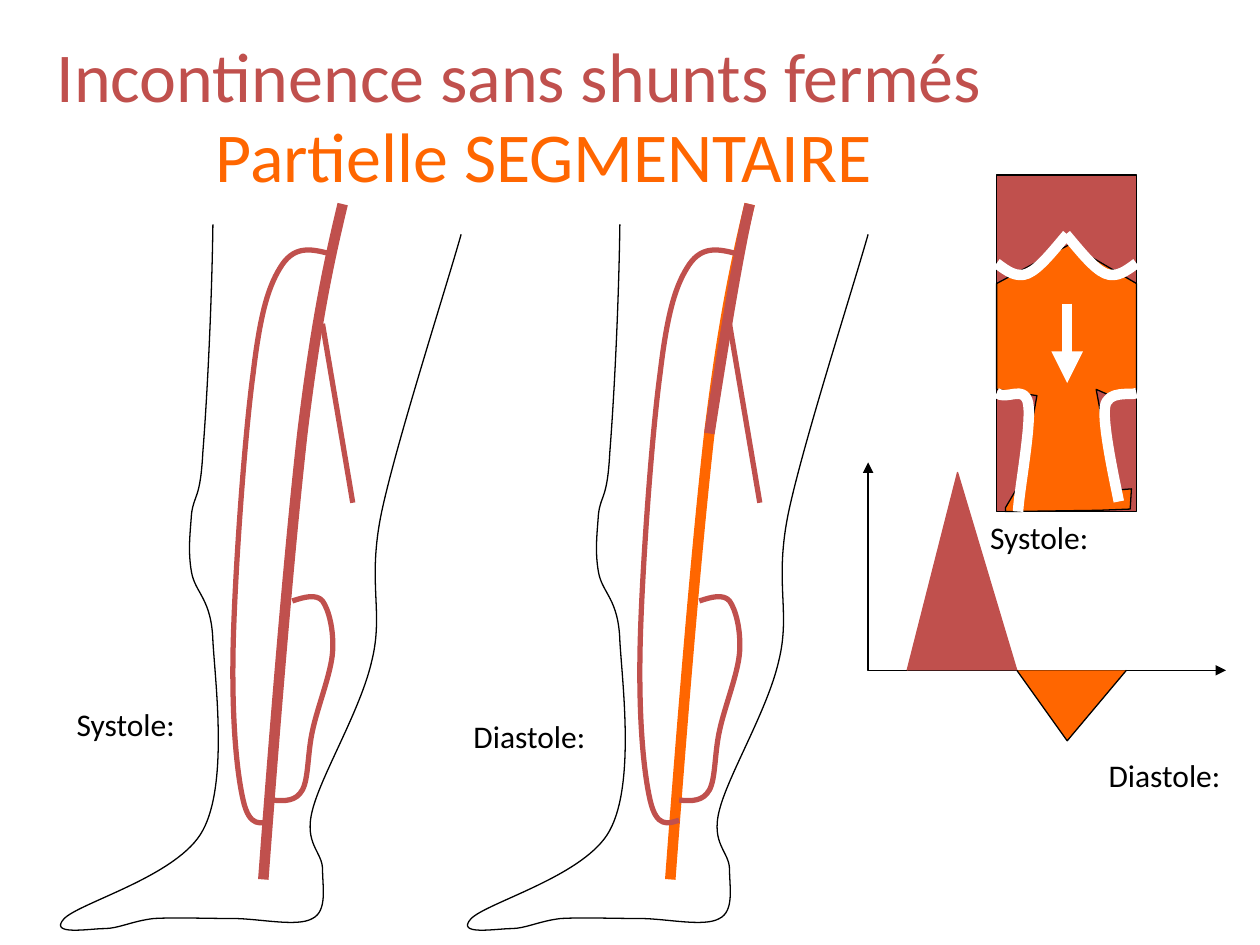
import pptx
import pptx.util
import pptx.dml.color
import pptx.enum.shapes
import pptx.enum.text
import pptx.oxml
import pptx.oxml.ns

RED = pptx.dml.color.RGBColor(0xC0, 0x50, 0x4D)
ORANGE = pptx.dml.color.RGBColor(0xFF, 0x66, 0x00)
BLACK = pptx.dml.color.RGBColor(0, 0, 0)
WHITE = pptx.dml.color.RGBColor(255, 255, 255)
FONT = "Calibri"
COLS, ROWS = 1000, 750

SKIN = [(131, 16), (130, 87), (126, 159), (123, 197), (121, 235), (116, 230),
        (114, 246), (113, 261), (111, 275), (114, 292), (117, 309), (130, 313),
        (131, 347), (133, 381), (143, 460), (123, 497), (104, 533), (26, 554),
        (13, 567), (0, 581), (33, 575), (45, 575), (56, 575), (67, 569),
        (84, 567), (101, 566), (126, 567), (147, 567), (168, 567), (198, 574),
        (210, 567), (222, 561), (218, 542), (218, 528), (218, 514), (203, 508),
        (210, 481), (217, 453), (248, 402), (257, 363), (267, 323), (253, 301),
        (265, 244), (277, 188), (315, 70), (328, 24)]
TRUNK = [(234, 0), (223, 46), (213, 92), (202, 182),
         (192, 271), (181, 403), (171, 536)]
UPPER = [(234, 0), (223, 46), (207, 151), (202, 182)]
LOOP = [(226, 40), (211, 36), (197, 32), (186, 48), (176, 63), (169, 83),
        (163, 134), (156, 185), (148, 298), (147, 355), (146, 411), (150, 451),
        (155, 473), (160, 495), (169, 492), (178, 489)]
BRANCH = [(218, 95), (228, 154), (238, 213), (242, 237)]
CALF = [(194, 315), (203, 312), (213, 309), (218, 315), (223, 322), (227, 338),
        (226, 355), (225, 372), (214, 399), (210, 418), (206, 436), (207, 456),
        (202, 465), (197, 474), (188, 474), (178, 473)]
FLOW = [(0, 86), (58, 55), (111, 86), (111, 170), (95, 177), (79, 170),
        (94, 250), (107, 249), (106, 265), (81, 266), (7, 267), (7, 264),
        (20, 242), (32, 175), (0, 170), (0, 86)]
CUSP = [(0, 70), (8, 76), (16, 82), (25, 78), (34, 74), (45, 60), (56, 47)]
LEFT = [(0, 173), (8, 179), (22, 166), (25, 181), (28, 197), (18, 249), (17, 267)]
RIGHT = [(111, 173), (107, 175), (88, 170), (86, 184), (84, 199), (94, 244), (97, 259)]


def grid(box, cols, rows):
    x, y, w, h = box
    return lambda c, r: (round(x + w * c / cols), round(y + h * r / rows))


def span(cell, c, r, w, h):
    x, y = cell(c, r)
    right, low = cell(c + w, r + h)
    return x, y, right - x, low - y


def paint(shape, ink, width, fill=None):
    shape.shadow.inherit = False
    shape.line.color.rgb = ink
    shape.line.width = pptx.util.Pt(width)
    if fill is None:
        shape.fill.background()
    else:
        shape.fill.solid()
        shape.fill.fore_color.rgb = fill


def trace(slide, cell, pts, ink, width, fill=None):
    spots = [cell(*p) for p in pts]
    pen = slide.shapes.build_freeform(*spots[0])
    pen.add_line_segments(spots[1:], close=pts[0] == pts[-1])
    shape = pen.convert_to_shape()
    paint(shape, ink, width, fill)
    return shape


def bend(slide, cell, knots, ink, width):
    shape = trace(slide, cell, knots, ink, width)
    legs = list(shape._element.iter(pptx.oxml.ns.qn("a:lnTo")))
    for i in range(0, len(legs), 3):
        arc = pptx.oxml.parse_xml(
            f'<a:cubicBezTo {pptx.oxml.ns.nsdecls("a")}/>')
        legs[i].addprevious(arc)
        for part in legs[i:i + 3]:
            arc.append(part[0])
            part.getparent().remove(part)


def arrow(shape, *ends):
    line = shape.line._get_or_add_ln()
    for end in ends:
        tip = pptx.oxml.parse_xml(
            f'<a:{end} {pptx.oxml.ns.nsdecls("a")} type="triangle"/>')
        line.append(tip)


def write(frame, text, size, ink):
    frame.word_wrap = True
    frame.auto_size = pptx.enum.text.MSO_AUTO_SIZE.NONE
    frame.vertical_anchor = pptx.enum.text.MSO_ANCHOR.TOP
    para = frame.paragraphs[0]
    para.alignment = pptx.enum.text.PP_ALIGN.LEFT
    para.space_before = pptx.util.Pt(0)
    run = para.add_run()
    run.text = text
    run.font.name = FONT
    run.font.size = pptx.util.Pt(size)
    run.font.color.rgb = ink


def label(slide, cell, c, r, text):
    box = slide.shapes.add_textbox(*span(cell, c, r, 236, 40))
    write(box.text_frame, text, 18, BLACK)


def head(holder, box, text, ink):
    holder.left, holder.top, holder.width, holder.height = box
    write(holder.text_frame, text, 40, ink)


def leg(slide, box, trunk, text, spot):
    cell = grid(box, 328, 580)
    bend(slide, cell, SKIN, BLACK, 0.75)
    bend(slide, cell, TRUNK, trunk, 6)
    for vein in (LOOP, BRANCH, CALF):
        bend(slide, cell, vein, RED, 3)
    if trunk != RED:
        bend(slide, cell, UPPER, RED, 6)
    label(slide, cell, *spot, text)


def graph(slide, box):
    cell = grid(box, 284, 221)
    axes = trace(slide, cell, [(0, 0), (0, 165), (284, 165)], BLACK, 0.75)
    arrow(axes, "headEnd", "tailEnd")
    trace(slide, cell, [(31, 165), (71, 8), (118, 165)], RED, 0.75, RED)
    trace(slide, cell, [(118, 165), (158, 221), (205, 165)], BLACK, 0.75, ORANGE)
    label(slide, cell, 87, 39, "Systole:")
    label(slide, cell, 181, 228, "Diastole:")


def valve(slide, box):
    cell = grid(box, 111, 267)
    wall = slide.shapes.add_shape(pptx.enum.shapes.MSO_SHAPE.RECTANGLE, *box)
    paint(wall, BLACK, 0.75, RED)
    trace(slide, cell, FLOW, BLACK, 0.75, ORANGE)
    down = slide.shapes.add_connector(
        pptx.enum.shapes.MSO_CONNECTOR.STRAIGHT, *cell(56, 102), *cell(56, 165))
    down.line.color.rgb = WHITE
    down.line.width = pptx.util.Pt(6)
    arrow(down, "tailEnd")
    down._element.spPr.append(
        pptx.oxml.parse_xml(f'<a:effectLst {pptx.oxml.ns.nsdecls("a")}/>'))
    twin = [(111 - c, r) for c, r in CUSP]
    for flap in (LEFT, RIGHT, CUSP, twin):
        bend(slide, cell, flap, WHITE, 6)


def main():
    deck = pptx.Presentation()
    deck.slide_width = pptx.util.Inches(10)
    deck.slide_height = pptx.util.Inches(7.5)
    slide = deck.slides.add_slide(deck.slide_layouts[0])
    page = grid((0, 0, deck.slide_width, deck.slide_height), COLS, ROWS)
    head(slide.shapes.title, span(page, 35, 21, 953, 177),
         "Incontinence sans shunts fermés", RED)
    head(slide.placeholders[1], span(page, 161, 84, 858, 177),
         "Partielle SEGMENTAIRE", ORANGE)
    leg(slide, span(page, 38, 162, 328, 580), RED, "Systole:", (13, 393))
    leg(slide, span(page, 361, 162, 328, 580), ORANGE, "Diastole:", (5, 402))
    graph(slide, span(page, 689, 367, 284, 221))
    valve(slide, span(page, 791, 139, 111, 267))
    deck.save("out.pptx")


if __name__ == "__main__":
    main()
